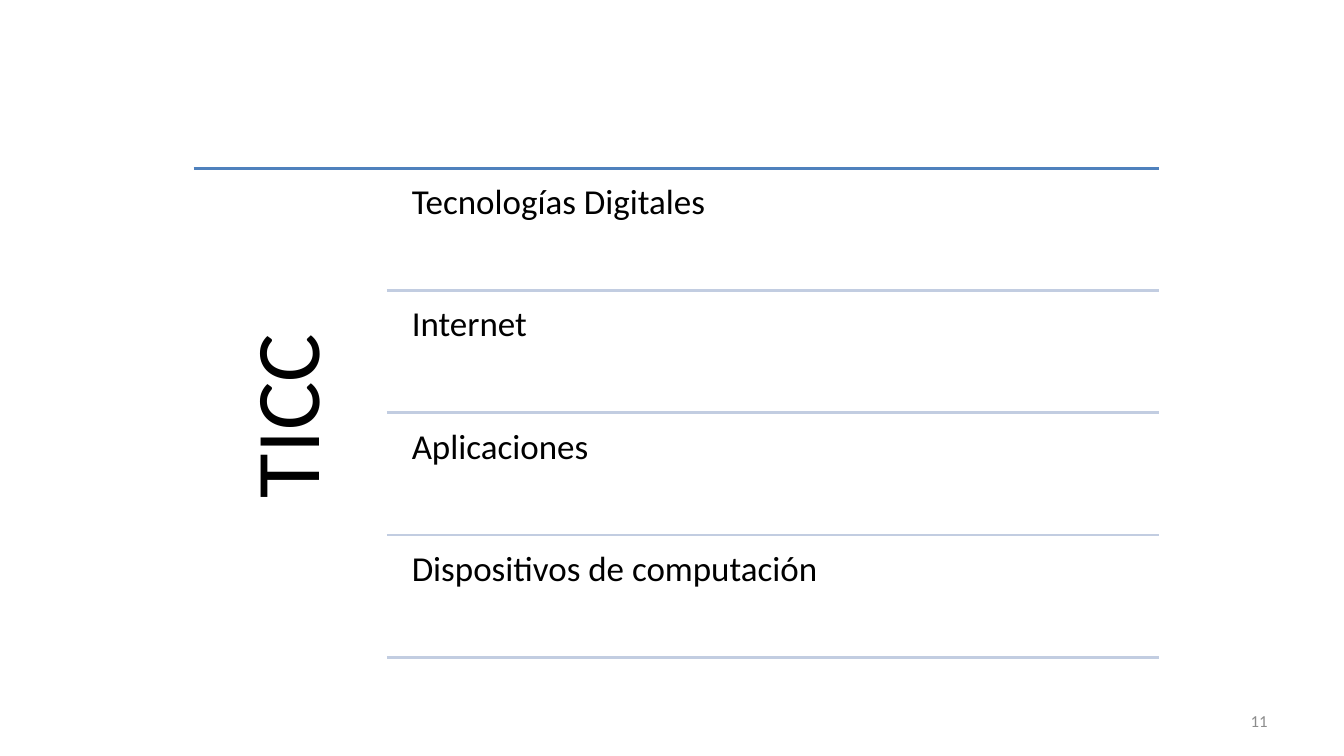
from dataclasses import dataclass

from lxml import etree
from pptx import Presentation
from pptx.dml.color import RGBColor
from pptx.enum.shapes import MSO_CONNECTOR
from pptx.enum.text import MSO_ANCHOR, PP_ALIGN
from pptx.oxml.ns import qn
from pptx.util import Inches, Pt

STRAIGHT = MSO_CONNECTOR.STRAIGHT
TOP, MIDDLE = MSO_ANCHOR.TOP, MSO_ANCHOR.MIDDLE
LEFT, CENTER, RIGHT = PP_ALIGN.LEFT, PP_ALIGN.CENTER, PP_ALIGN.RIGHT


@dataclass(frozen=True)
class Theme:
    font: str = "Calibri"
    ink: str = "000000"
    muted: str = "8C8C8C"
    accent: str = "4F81BD"
    rule: str = "C2CDE1"
    heading_size: int = 65
    item_size: int = 25
    number_size: int = 12
    rule_width: int = 2


THEME = Theme()
ITEMS = ["Tecnologías Digitales", "Internet", "Aplicaciones",
         "Dispositivos de computación"]
GRID_LEFT, GRID_TOP, GRID_WIDTH, GRID_HEIGHT = 1.92, 1.67, 9.58, 4.85
COLUMN = GRID_WIDTH / 5
ROW = GRID_HEIGHT / len(ITEMS)
GRID_RIGHT = GRID_LEFT + GRID_WIDTH
ITEM_INDENT, ITEM_DROP = 0.15, 0.06


def add_text(s, text, box, size, color, align=LEFT, anchor=TOP,
             inset=0.1, spacing=0.9):
    sp = s.shapes.add_textbox(*map(Inches, box))
    tf = sp.text_frame
    tf.word_wrap = True
    tf.vertical_anchor = anchor
    tf.margin_left = tf.margin_right = Inches(inset)
    tf.margin_top = tf.margin_bottom = Inches(inset)
    p = tf.paragraphs[0]
    p.text = text
    p.alignment = align
    p.line_spacing = spacing
    p.font.name = THEME.font
    p.font.size = Pt(size)
    p.font.color.rgb = RGBColor.from_string(color)
    return sp


def add_rule(s, left, y, color):
    ends = map(Inches, (left, y, GRID_RIGHT, y))
    line = s.shapes.add_connector(STRAIGHT, *ends)
    line.line.color.rgb = RGBColor.from_string(color)
    line.line.width = Pt(THEME.rule_width)
    etree.SubElement(line._element.spPr, qn("a:effectLst"))


def add_heading(s, text):
    box = (GRID_LEFT, GRID_TOP, COLUMN, GRID_HEIGHT + ITEM_DROP)
    sp = add_text(s, text, box, THEME.heading_size, THEME.ink,
                  CENTER, MIDDLE, inset=0.27)
    sp.text_frame._txBody.bodyPr.set("vert", "vert270")


def add_item(s, row, text):
    column_left = GRID_LEFT + COLUMN
    left = column_left + ITEM_INDENT
    top = GRID_TOP + row * ROW
    box = (left, top + ITEM_DROP, GRID_RIGHT - left, ROW - ITEM_DROP)
    add_text(s, text, box, THEME.item_size, THEME.ink)
    add_rule(s, column_left, top + ROW, THEME.rule)


def main():
    prs = Presentation()
    prs.slide_width, prs.slide_height = Inches(13.33), Inches(7.5)
    s = prs.slides.add_slide(prs.slide_layouts[6])
    add_rule(s, GRID_LEFT, GRID_TOP, THEME.accent)
    add_heading(s, "TICC")
    for row, text in enumerate(ITEMS):
        add_item(s, row, text)
    add_text(s, "11", (9.56, 6.95, 3.11, 0.4), THEME.number_size,
             THEME.muted, RIGHT, MIDDLE, spacing=1.0)
    prs.save("out.pptx")


if __name__ == "__main__":
    main()
